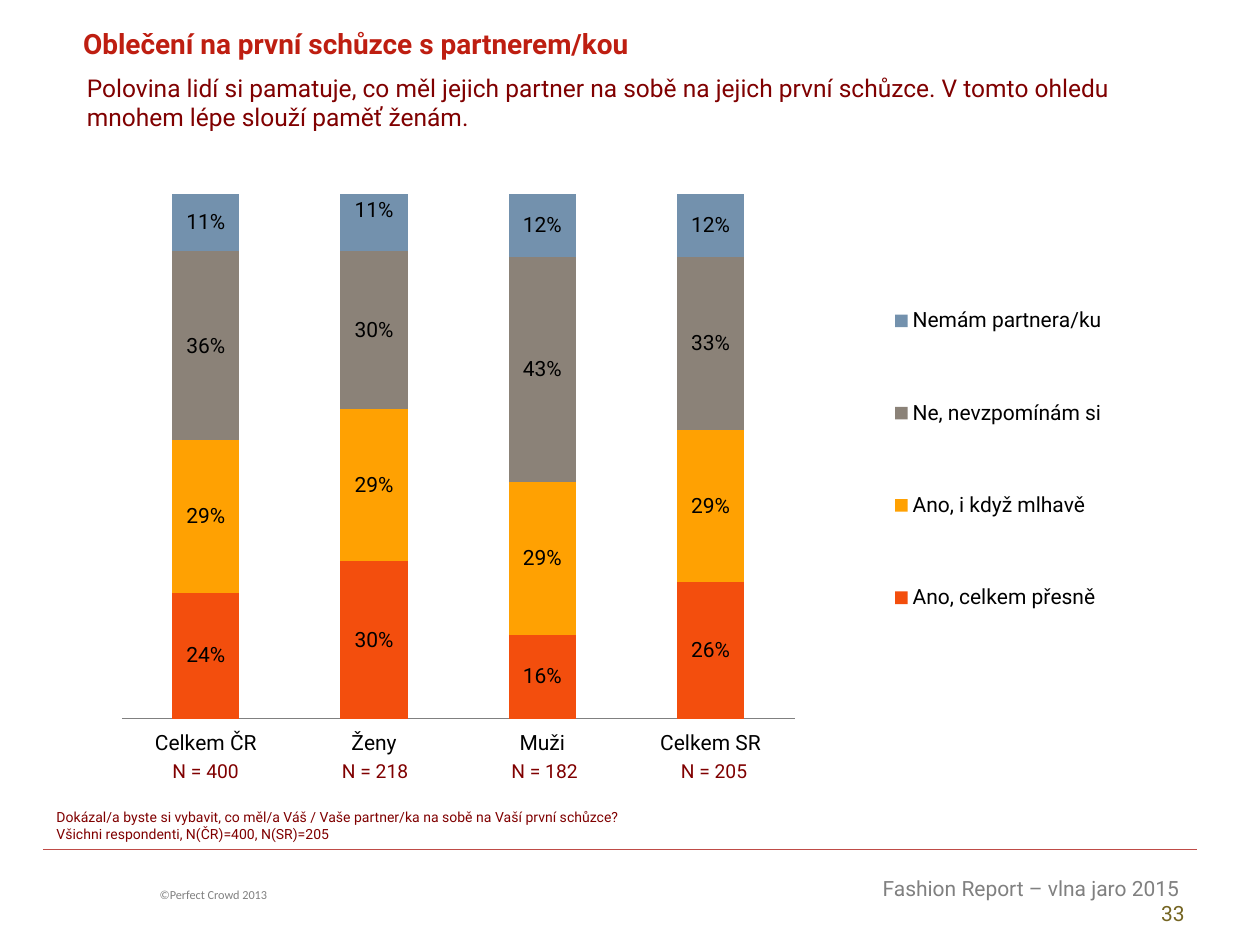
from lxml import etree
from pptx import Presentation
from pptx.chart.data import CategoryChartData
from pptx.dml.color import RGBColor
from pptx.enum.chart import XL_CHART_TYPE, XL_LEGEND_POSITION, XL_TICK_LABEL_POSITION, XL_TICK_MARK
from pptx.enum.shapes import MSO_CONNECTOR
from pptx.enum.text import MSO_ANCHOR, MSO_AUTO_SIZE, PP_ALIGN
from pptx.oxml.ns import qn
from pptx.util import Pt

STACKED = XL_CHART_TYPE.COLUMN_STACKED_100
LEGEND_RIGHT = XL_LEGEND_POSITION.RIGHT
LABELS_LOW = XL_TICK_LABEL_POSITION.LOW
NO_TICKS = XL_TICK_MARK.NONE
STRAIGHT = MSO_CONNECTOR.STRAIGHT
TOP, MIDDLE = MSO_ANCHOR.TOP, MSO_ANCHOR.MIDDLE
LEFT, CENTER, RIGHT = PP_ALIGN.LEFT, PP_ALIGN.CENTER, PP_ALIGN.RIGHT
NO_AUTOFIT = MSO_AUTO_SIZE.NONE

MAROON, RED, GRAY, OLIVE, BLACK = "800000", "BE1E11", "808080", "756522", "000000"
PERCENT = '#,##0"%"'
GROUPS = ["Celkem ČR", "Ženy", "Muži", "Celkem SR"]
BASES = [400, 218, 182, 205]
ANSWERS = [
    ("Ano, celkem přesně", [24, 30, 16, 26], "F34E0D"),
    ("Ano, i když mlhavě", [29, 29, 29, 29], "FFA102"),
    ("Ne, nevzpomínám si", [36, 30, 43, 33], "8B8278"),
    ("Nemám partnera/ku", [11, 11, 12, 12], "7391AD"),
]


def rgb(value):
    return RGBColor.from_string(value)


def place_manually(element, index, **settings):
    for old in element.findall(qn("c:layout")):
        element.remove(old)
    layout = etree.Element(qn("c:layout"))
    manual = etree.SubElement(layout, qn("c:manualLayout"))
    for name, value in settings.items():
        etree.SubElement(manual, qn(f"c:{name}")).set("val", str(value))
    element.insert(index, layout)


class SlideBuilder:
    font = "Roboto"

    def __init__(self, prs):
        self.slide = prs.slides.add_slide(prs.slide_layouts[5])

    def style(self, font, size, color, bold=False, name=None):
        font.name = name or self.font
        font.size = Pt(size)
        font.bold = bold
        font.color.rgb = rgb(color)

    def title(self, text, box, size, color):
        sp = self.slide.shapes.title
        sp.left, sp.top, sp.width, sp.height = map(Pt, box)
        tf = sp.text_frame
        tf.text = text
        tf.auto_size = NO_AUTOFIT
        tf.vertical_anchor = TOP
        p = tf.paragraphs[0]
        p.alignment = LEFT
        self.style(p.font, size, color, bold=True)

    def text(self, lines, box, size, color, align=LEFT, name=None):
        tf = self.slide.shapes.add_textbox(*map(Pt, box)).text_frame
        tf.word_wrap = True
        for i, line in enumerate(lines):
            p = tf.add_paragraph() if i else tf.paragraphs[0]
            p.text = line
            p.alignment = align
            self.style(p.font, size, color, name=name)
        return tf

    def footer(self, text, number, box):
        p = self.text([text], box, 12, GRAY, RIGHT).paragraphs[0]
        p.add_line_break()
        r = p.add_run()
        r.text = number
        r.font.color.rgb = rgb(OLIVE)

    def line(self, x1, y1, x2, y2, color, width):
        s = self.slide.shapes.add_connector(STRAIGHT, Pt(x1), Pt(y1), Pt(x2), Pt(y2))
        s.line.color.rgb = rgb(color)
        s.line.width = Pt(width)
        etree.SubElement(s.element.spPr, qn("a:effectLst"))

    def table_row(self, texts, box, size, color):
        table = self.slide.shapes.add_table(1, len(texts), *map(Pt, box)).table
        table.first_row = table.horz_banding = False
        for cell, text in zip(table.rows[0].cells, texts):
            cell.fill.background()
            cell.vertical_anchor = MIDDLE
            cell.margin_left = cell.margin_right = 0
            cell.margin_top = cell.margin_bottom = 0
            cell.text = text
            p = cell.text_frame.paragraphs[0]
            p.alignment = CENTER
            self.style(p.font, size, color)

    def stacked_chart(self, groups, answers, box):
        data = CategoryChartData()
        data.categories = groups
        for name, values, _ in answers:
            data.add_series(name, values)
        chart = self.slide.shapes.add_chart(STACKED, *map(Pt, box), data).chart
        self.style(chart.font, 12, BLACK)
        chart.has_title = False

        axis = chart.category_axis
        axis.major_tick_mark = axis.minor_tick_mark = NO_TICKS
        axis.tick_label_position = LABELS_LOW
        axis.format.line.color.rgb = rgb(GRAY)
        axis.format.line.width = Pt(0.75)
        chart.value_axis.has_major_gridlines = False
        chart.value_axis.visible = False

        chart.has_legend = True
        chart.legend.position = LEGEND_RIGHT
        chart.legend.include_in_layout = False
        place_manually(chart.element.find(".//" + qn("c:legend")), 1,
                       xMode="edge", yMode="edge", x=0.7, y=0.13, w=0.28, h=0.7)
        place_manually(chart.element.find(".//" + qn("c:plotArea")), 0,
                       layoutTarget="inner", xMode="edge", yMode="edge",
                       x=0.031, y=0.054, w=0.621, h=0.842)

        plot = chart.plots[0]
        plot.gap_width, plot.overlap = 150, 100
        plot.vary_by_categories = False
        for series, (_, _, color) in zip(plot.series, answers):
            series.format.fill.solid()
            series.format.fill.fore_color.rgb = rgb(color)
            labels = series.data_labels
            labels.show_value = True
            labels.number_format = PERCENT
            labels.number_format_is_linked = False
            self.style(labels.font, 12, BLACK)
        return chart

    def shift_label(self, chart, series, point, x, y):
        label = chart.plots[0].series[series].points[point].data_label
        self.style(label.font, 12, BLACK)
        element = chart.element.find(".//" + qn("c:dLbl"))
        place_manually(element, 1, x=x, y=y)
        number = etree.Element(qn("c:numFmt"), formatCode=PERCENT, sourceLinked="0")
        element.insert(2, number)


def main():
    prs = Presentation()
    prs.slide_width, prs.slide_height = Pt(720), Pt(540)
    b = SlideBuilder(prs)
    b.line(24.5, 485.3, 684, 485.3, "BF4C48", 0.75)
    b.text(["©Perfect Crowd 2013"], (84.2, 503.3, 209.5, 15.8), 7, GRAY, name="Calibri")
    b.footer("Fashion Report – vlna jaro 2015 ", "33", (416.9, 496.8, 267.1, 36))
    b.title("Oblečení na první schůzce s partnerem/kou", (40.3, 11.5, 540.7, 26.6), 16, RED)
    b.text(["Dokázal/a byste si vybavit, co měl/a Váš / Vaše partner/ka na sobě na Vaší první schůzce?",
            "Všichni respondenti, N(ČR)=400, N(SR)=205"], (25.2, 458.6, 652.3, 26.6), 8, MAROON)
    b.text(["Polovina lidí si pamatuje, co měl jejich partner na sobě na jejich první schůzce. "
            "V tomto ohledu mnohem lépe slouží paměť ženám."], (42.5, 38.2, 646.6, 58.3), 14, MAROON)
    b.table_row([f"N = {n}" for n in BASES], (69.1, 433.4, 387.4, 15.1), 11, MAROON)
    chart = b.stacked_chart(GROUPS, ANSWERS, (50.4, 91.4, 619.2, 356.4))
    b.shift_label(chart, series=3, point=1, x=0, y=-0.02)
    prs.save("out.pptx")


if __name__ == "__main__":
    main()
